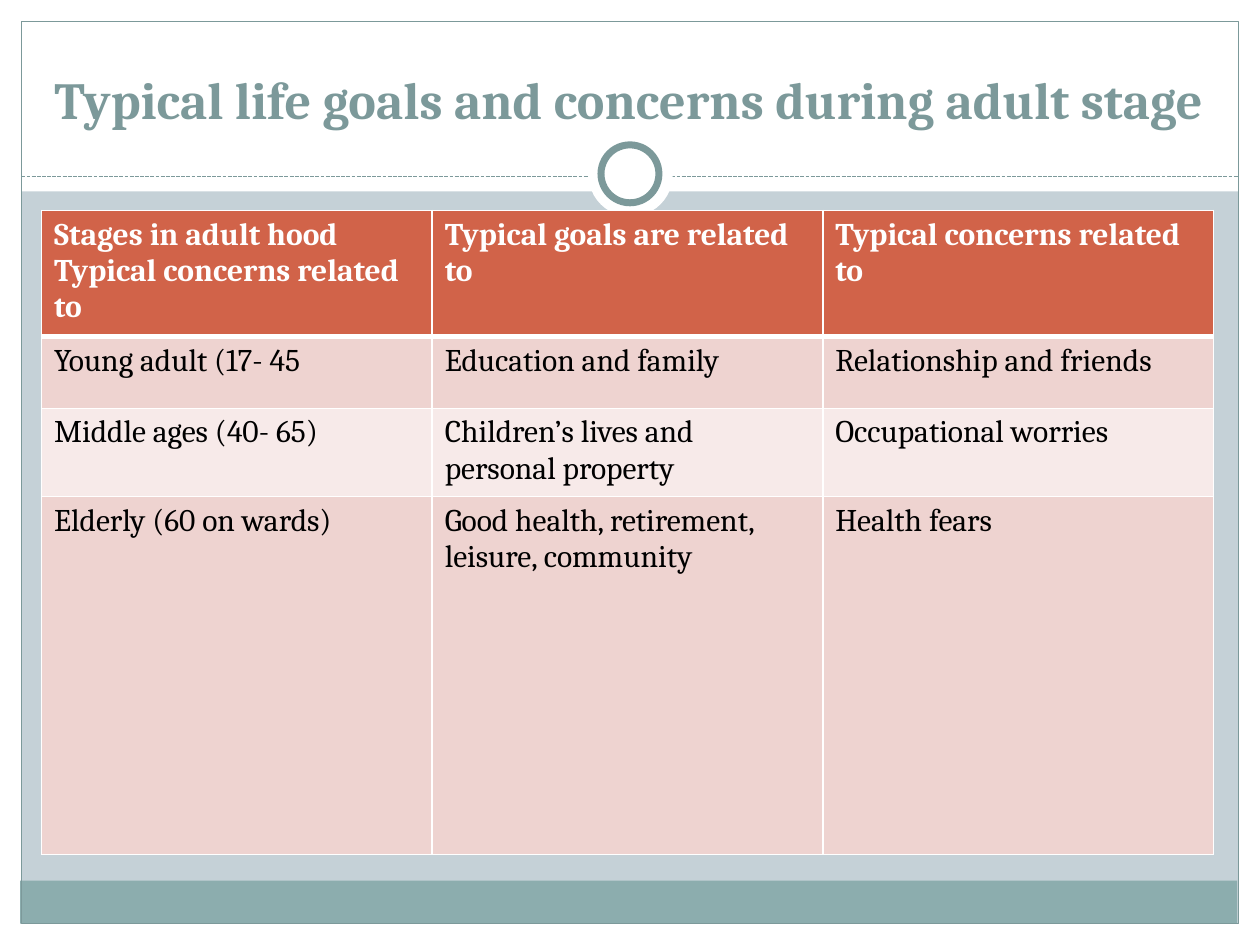
"""Build a slide with a table of life goals and concerns in adulthood."""
from lxml.etree import SubElement as Sub
from pptx import Presentation
from pptx.dml.color import RGBColor
from pptx.enum.dml import MSO_LINE as Dash
from pptx.enum.shapes import MSO_CONNECTOR as Link, MSO_SHAPE as Kind
from pptx.enum.text import MSO_ANCHOR as Anchor, PP_ALIGN as Align
from pptx.oxml import parse_xml
from pptx.oxml.ns import nsdecls, qn
from pptx.util import Inches, Pt

WHITE = RGBColor(0xFF, 0xFF, 0xFF)
BLACK = RGBColor(0x00, 0x00, 0x00)
MIST = RGBColor(0xC5, 0xD1, 0xD7)
TEAL = RGBColor(0x8C, 0xAD, 0xAE)
SLATE = RGBColor(0x7C, 0x99, 0x9A)
RUST = RGBColor(0xD1, 0x63, 0x49)
ROSE = RGBColor(0xEE, 0xD3, 0xD0)
BLUSH = RGBColor(0xF7, 0xEA, 0xE9)
FONT = "Cambria"

deck = Presentation()
deck.slide_width, deck.slide_height = Inches(10), Inches(7.5)
slide = deck.slides.add_slide(deck.slide_layouts[6])
slide.background.fill.solid()
slide.background.fill.fore_color.rgb = MIST


def add_form(kind, box, fill=None, line=None, width=0.75):
    form = slide.shapes.add_shape(kind, *map(Inches, box))
    form.shadow.inherit = False
    for part, color in ((form.fill, fill), (form.line.fill, line)):
        if color is None:
            part.background()
        else:
            part.solid()
            part.fore_color.rgb = color
    if line is not None:
        form.line.width = Pt(width)


def style(para, size, color, bold):
    for run in para.runs:
        run.font.name = FONT
        run.font.size = Pt(size)
        run.font.bold = bold
        run.font.color.rgb = color


for box in ((0, 7.33, 10, 0.17), (0, 0, 10, 1.52),
            (0, 0, 0.17, 7.5), (9.83, 0, 0.17, 7.5)):
    add_form(Kind.RECTANGLE, box, WHITE)
add_form(Kind.RECTANGLE, (0.16, 6.99, 9.66, 0.34), TEAL)
add_form(Kind.RECTANGLE, (0.17, 0.17, 9.66, 7.16), line=SLATE)

rule = slide.shapes.add_connector(
    Link.STRAIGHT, Inches(0.17), Inches(1.4), Inches(9.83), Inches(1.4))
rule.line.color.rgb = SLATE
rule.line.width = Pt(0.75)
rule.line.dash_style = Dash.SQUARE_DOT
Sub(rule.element.spPr, qn("a:effectLst"))

add_form(Kind.OVAL, (4.67, 1.05, 0.67, 0.67), WHITE)
add_form(Kind.OVAL, (4.77, 1.15, 0.46, 0.46), WHITE, SLATE, 4)

title = slide.shapes.add_textbox(
    Inches(0.33), Inches(0.25), Inches(9.33), Inches(0.83))
frame = title.text_frame
frame.word_wrap = True
frame.vertical_anchor = Anchor.BOTTOM
frame.text = "Typical life goals and concerns during adult stage"
frame.paragraphs[0].alignment = Align.CENTER
style(frame.paragraphs[0], 29.7, SLATE, True)

rows = [
    ("Stages in adult hood\nTypical concerns related to",
     "Typical goals are related to", "Typical concerns related to"),
    ("Young adult (17- 45", "Education and family",
     "Relationship and friends"),
    ("Middle ages (40- 65)", "Children’s lives and personal property",
     "Occupational worries"),
    ("Elderly (60 on wards)", "Good health, retirement, leisure, community",
     "Health fears"),
]
highs = (0.93, 0.57, 0.65, 2.84)
fills = (RUST, ROSE, BLUSH, ROSE)
grid = slide.shapes.add_table(
    len(rows), 3, Inches(0.33), Inches(1.67),
    Inches(9.3), Inches(sum(highs))).table
for col in grid.columns:
    col.width = Inches(3.1)

for r, (texts, high, fill) in enumerate(zip(rows, highs, fills)):
    grid.rows[r].height = Inches(high)
    head = r == 0
    sides = {"L": 1, "R": 1, "T": 3 if r == 1 else 1, "B": 3 if head else 1}
    for c, text in enumerate(texts):
        cell = grid.cell(r, c)
        cell.text_frame.text = text
        for para in cell.text_frame.paragraphs:
            style(para, 18, WHITE if head else BLACK, head)
        props = cell._tc.get_or_add_tcPr()
        for side, width in sides.items():
            props.append(parse_xml(
                f'<a:ln{side} {nsdecls("a")} w="{Pt(width)}"><a:solidFill>'
                f'<a:srgbClr val="{WHITE}"/></a:solidFill></a:ln{side}>'))
        cell.fill.solid()
        cell.fill.fore_color.rgb = fill

deck.save("out.pptx")
